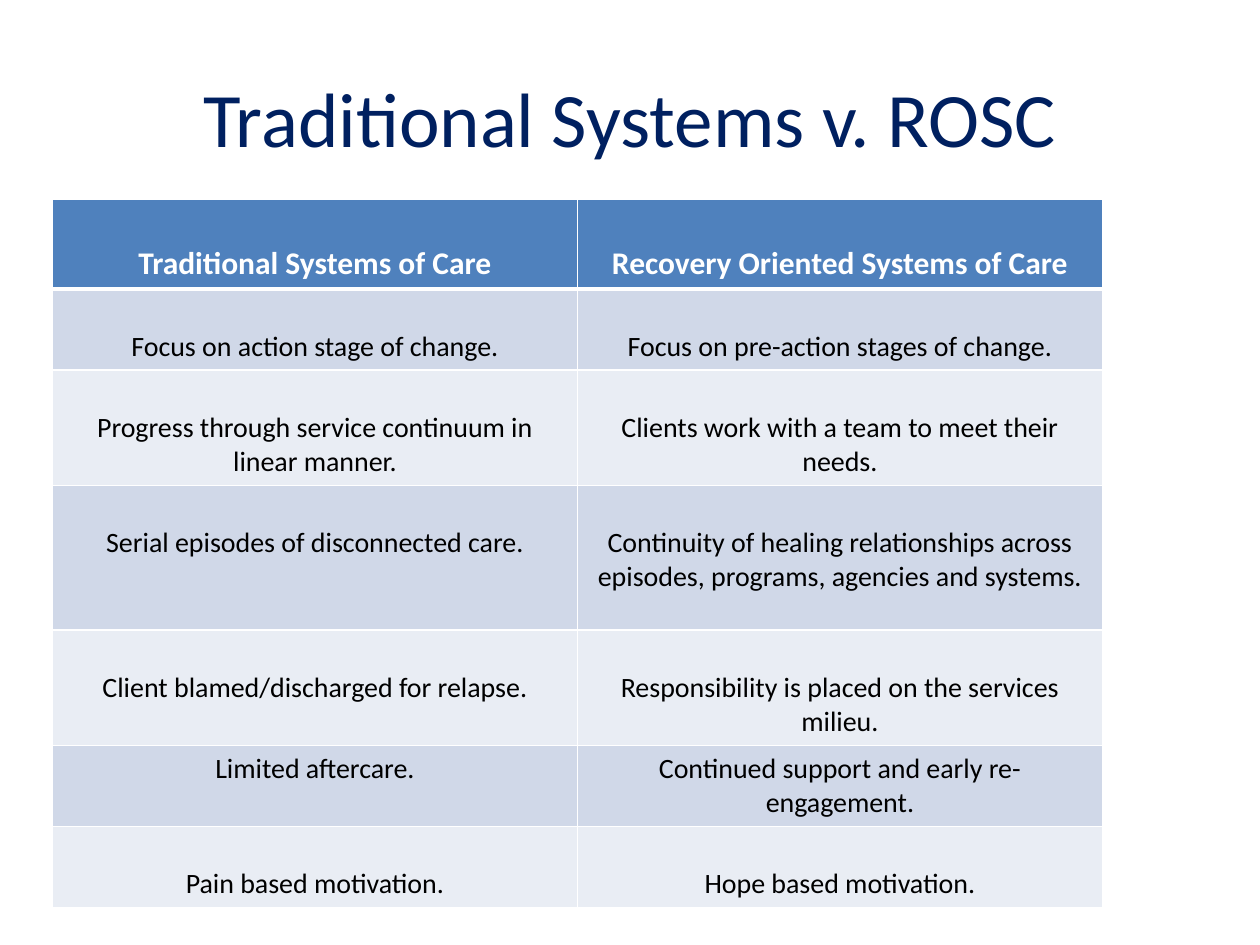
from lxml.etree import SubElement
from pptx import Presentation
from pptx.dml.color import RGBColor
from pptx.enum.text import MSO_ANCHOR, PP_ALIGN
from pptx.oxml.ns import qn
from pptx.util import Pt

ROWS = [
    ("Traditional Systems of Care", "Recovery Oriented Systems of Care"),
    ("Focus on action stage of change.", "Focus on pre-action stages of change."),
    ("Progress through service continuum in linear manner.",
     "Clients work with a team to meet their needs."),
    ("Serial episodes of disconnected care.",
     "Continuity of healing relationships across episodes, programs, agencies and systems."),
    ("Client blamed/discharged for relapse.",
     "Responsibility is placed on the services milieu."),
    ("Limited aftercare.", "Continued support and early re-engagement."),
    ("Pain based motivation.", "Hope based motivation."),
]
HEIGHTS = [44.64, 44.64, 64.08, 82.8, 64.08, 44.64, 44.64]
TIGHT_ROW = 5


def rgb(value):
    return RGBColor.from_string(value)


class Deck:
    font = "Calibri"
    border = "FFFFFF"
    bands = ("D0D8E8", "E9EDF4")
    title_format = {"size": Pt(44), "bold": False, "color": "002060"}
    head_format = {"size": Pt(18), "bold": True, "color": "FFFFFF"}
    body_format = {"size": Pt(16), "bold": False, "color": "000000"}
    head_fill = "4F81BD"
    margin = 3.6
    line_spacing = 1.22

    def __init__(self, width, height):
        self.prs = Presentation()
        self.prs.slide_width, self.prs.slide_height = Pt(width), Pt(height)
        self.s = self.prs.slides.add_slide(self.prs.slide_layouts[5])

    def text(self, tf, text, fmt):
        p = tf.paragraphs[0]
        p.alignment = PP_ALIGN.CENTER
        r = p.add_run()
        r.text = text
        r.font.name = self.font
        for name, value in fmt.items():
            if name == "color":
                r.font.color.rgb = rgb(value)
            else:
                setattr(r.font, name, value)

    def title(self, text, left, top, width, height):
        sp = self.s.shapes.title
        box = {"left": left, "top": top, "width": width, "height": height}
        for name, value in box.items():
            setattr(sp, name, Pt(value))
        sp.text_frame.vertical_anchor = MSO_ANCHOR.MIDDLE
        self.text(sp.text_frame, text, self.title_format)

    def borders(self, cell, widths):
        tc_pr = cell._tc.get_or_add_tcPr()
        for side, width in widths.items():
            ln = SubElement(tc_pr, qn(f"a:ln{side}"), w=str(Pt(width)))
            fill = SubElement(ln, qn("a:solidFill"))
            SubElement(fill, qn("a:srgbClr"), val=self.border)

    def cell(self, cell, text, row, tight):
        fmt = self.body_format if row else self.head_format
        gap = 0 if tight else fmt["size"].pt * self.line_spacing
        cell.margin_top = Pt(round(self.margin + gap, 2))
        self.borders(cell, {"L": 1, "R": 1, "T": 3 if row == 1 else 1,
                            "B": 1 if row else 3})
        cell.fill.solid()
        cell.fill.fore_color.rgb = rgb(self.bands[(row - 1) % 2] if row else self.head_fill)
        self.text(cell.text_frame, text, fmt)

    def table(self, rows, heights, left, top, width, tight_row):
        n_cols = len(rows[0])
        table = self.s.shapes.add_table(
            len(rows), n_cols, Pt(left), Pt(top), Pt(width), Pt(sum(heights))).table
        for col in table.columns:
            col.width = Pt(width / n_cols)
        for i, (texts, height) in enumerate(zip(rows, heights)):
            table.rows[i].height = Pt(height)
            for j, text in enumerate(texts):
                self.cell(table.cell(i, j), text, i, i == tight_row)


def main():
    deck = Deck(720, 540)
    deck.title("Traditional Systems v. ROSC", 36, 21.6, 648, 90)
    deck.table(ROWS, HEIGHTS, 30, 114, 600, TIGHT_ROW)
    deck.prs.save("out.pptx")


if __name__ == "__main__":
    main()
